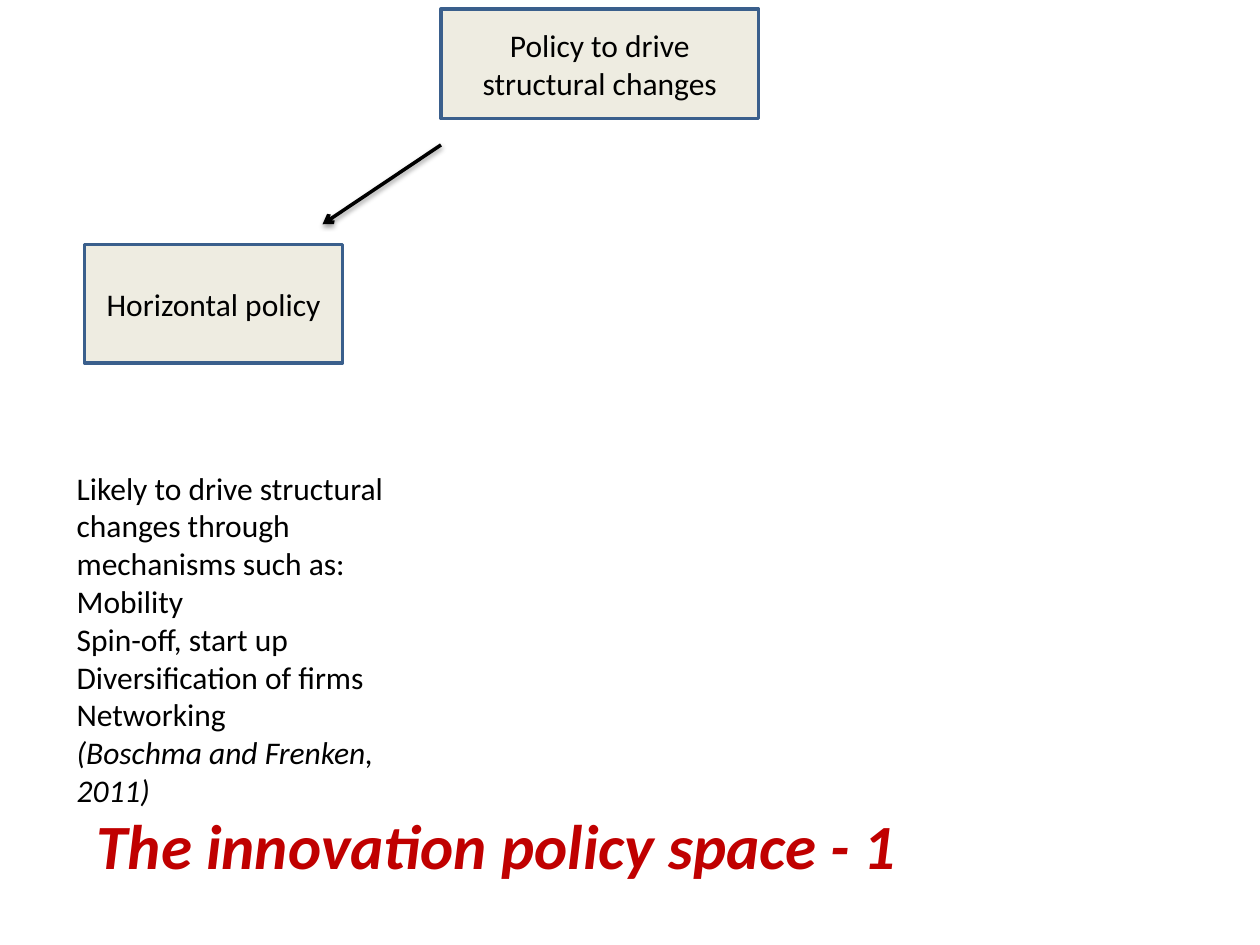
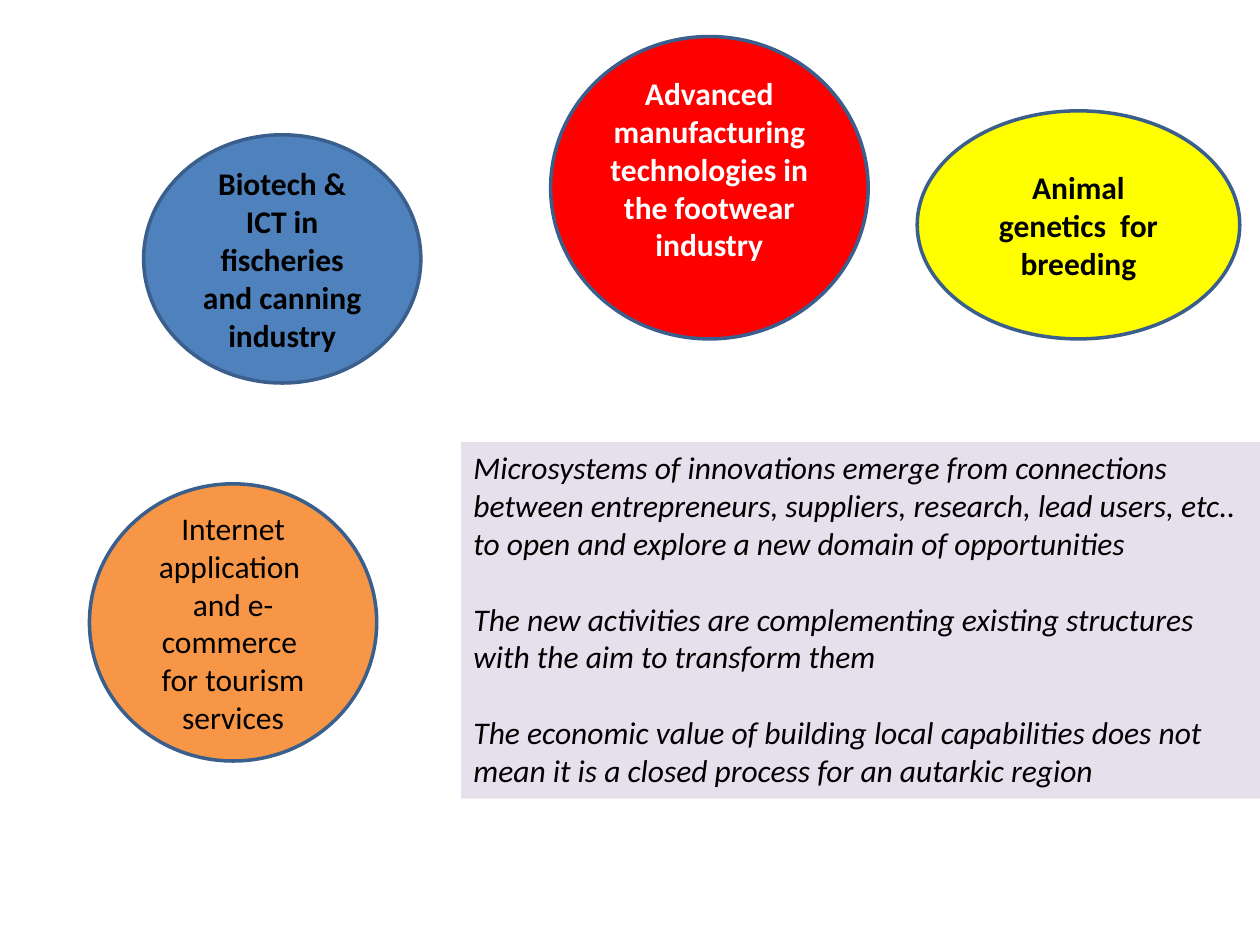
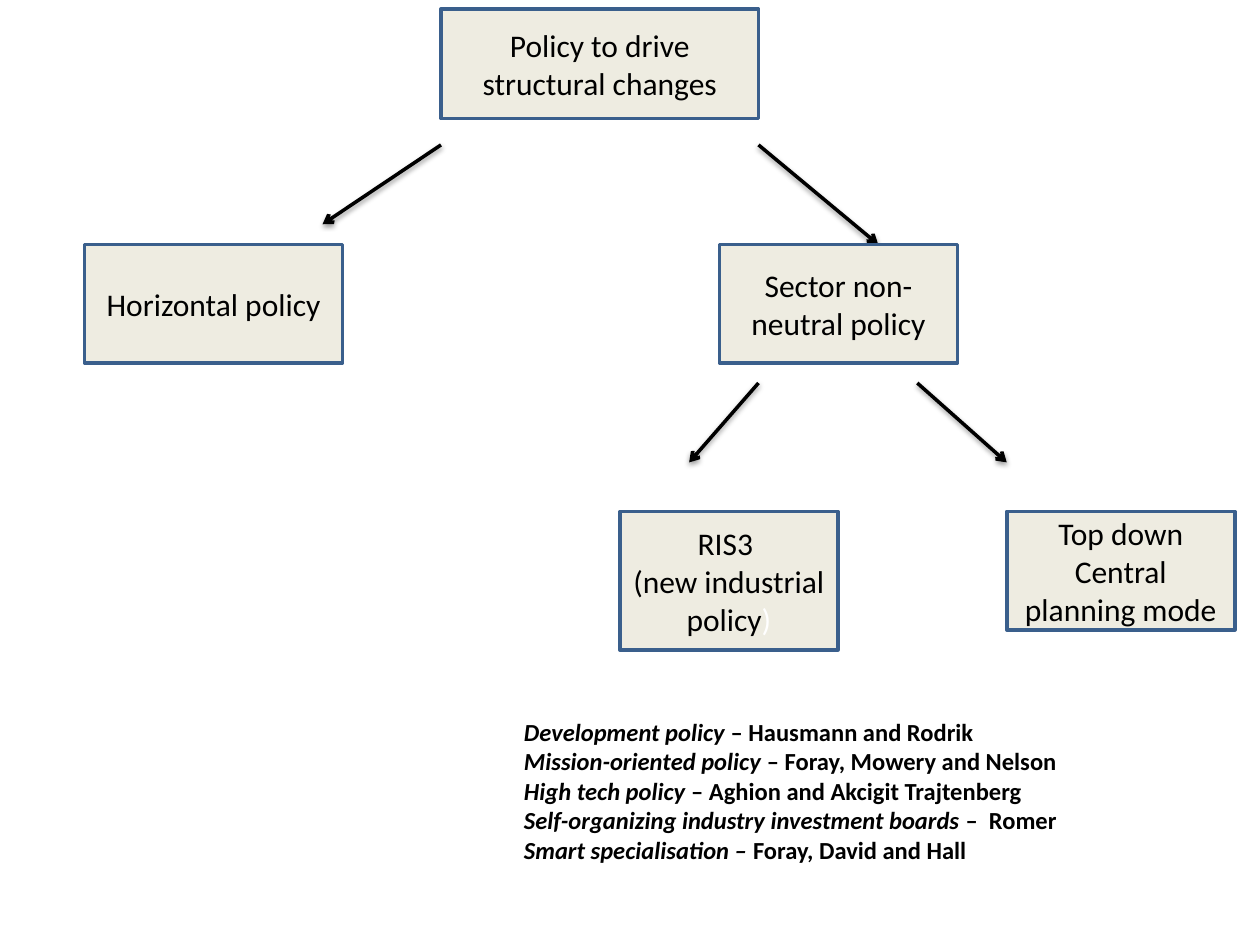
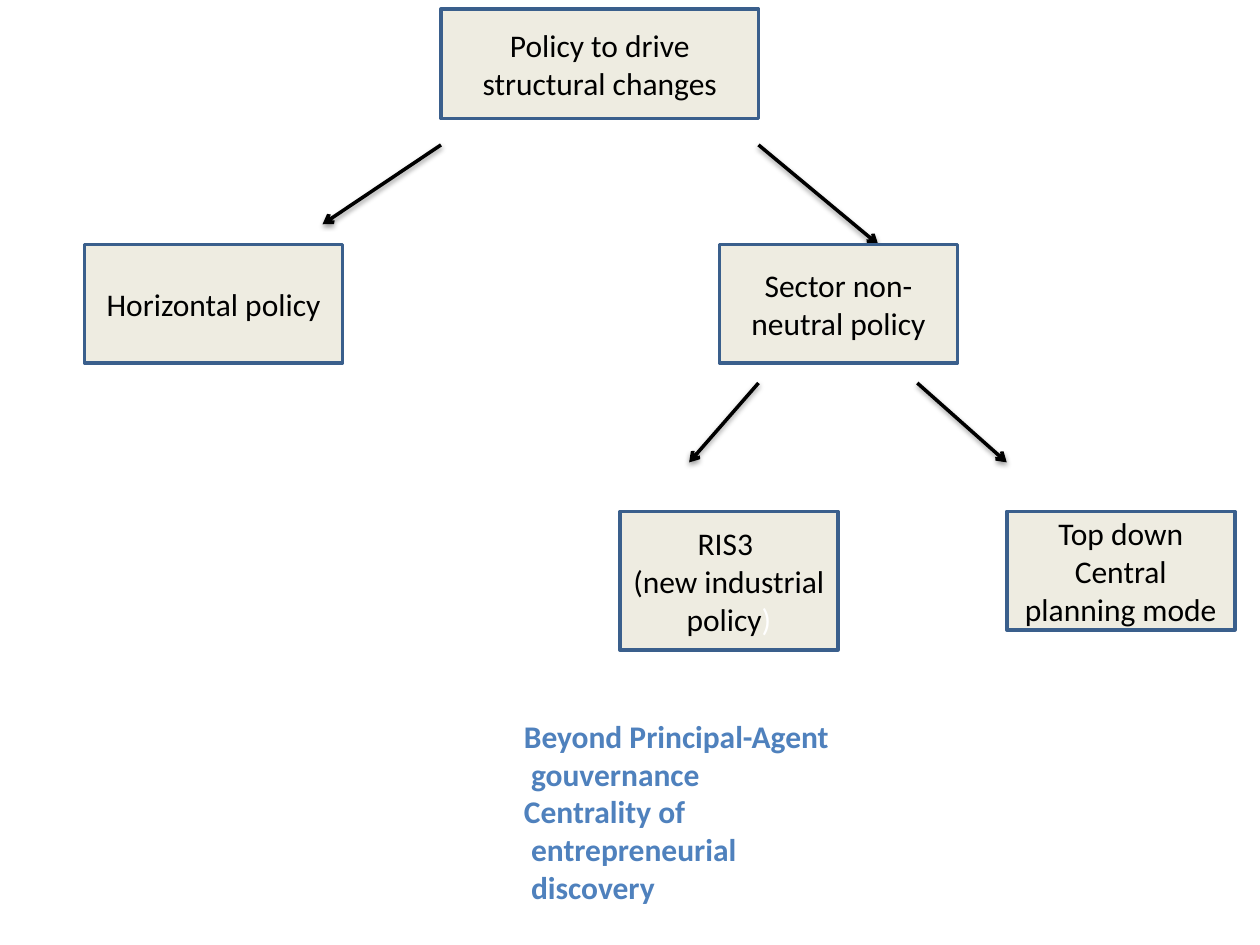
from dataclasses import dataclass

from lxml.etree import SubElement
from pptx import Presentation
from pptx.dml.color import RGBColor
from pptx.enum.shapes import MSO_CONNECTOR, MSO_SHAPE
from pptx.enum.text import MSO_ANCHOR, MSO_AUTO_SIZE, PP_ALIGN
from pptx.oxml.ns import qn
from pptx.util import Inches, Pt

FONT = "Calibri"
BLACK, WHITE = "000000", "FFFFFF"
BEIGE, EDGE, BLUE, RED = "EEECE1", "3A5F8C", "4F81BD", "C00000"
ROW = 0.94  # height of most policy boxes
LINE = 21.6  # points from one 18 pt line to the next


@dataclass(frozen=True)
class Run:
    text: str
    color: str = BLACK
    bold: bool = False
    italic: bool = False
    size: int = 18


Paras = list[list[Run]]


@dataclass(frozen=True)
class Node:
    left: float
    top: float
    width: float
    height: float
    paras: Paras
    fill: str = BEIGE
    kind: MSO_SHAPE = MSO_SHAPE.RECTANGLE
    foot: float = 0.05  # bottom inset


@dataclass(frozen=True)
class Arrow:
    x1: float
    y1: float
    x2: float
    y2: float


def rgb(color: str) -> RGBColor:
    return RGBColor.from_string(color)


def paras(*texts: str, **style) -> Paras:
    """One paragraph of one run for each text, all in the same style."""
    return [[Run(text, **style)] for text in texts]


def write(frame, rows: Paras, align=PP_ALIGN.LEFT, gap: float = 0) -> None:
    frame.word_wrap = True
    for i, row in enumerate(rows):
        para = frame.paragraphs[0] if i == 0 else frame.add_paragraph()
        para.alignment = align
        para.space_before = Pt(gap if i else 0)
        for item in row:
            run = para.add_run()
            run.text = item.text
            font = run.font
            font.name, font.size = FONT, Pt(item.size)
            font.bold, font.italic = item.bold, item.italic
            font.color.rgb = rgb(item.color)


def add_shape(slide, node: Node):
    shape = slide.shapes.add_shape(
        node.kind, Inches(node.left), Inches(node.top),
        Inches(node.width), Inches(node.height))
    shape.shadow.inherit = False
    shape.fill.solid()
    shape.fill.fore_color.rgb = rgb(node.fill)
    return shape


def add_node(slide, node: Node) -> None:
    shape = add_shape(slide, node)
    shape.line.color.rgb = rgb(EDGE)
    shape.line.width = Pt(2)
    frame = shape.text_frame
    frame.vertical_anchor = MSO_ANCHOR.MIDDLE
    frame.margin_bottom = Inches(node.foot)
    write(frame, node.paras, PP_ALIGN.CENTER)


def add_panel(slide, node: Node) -> None:
    """A borderless filled box of text with a blank line's gap between paragraphs."""
    shape = add_shape(slide, node)
    shape.line.fill.background()
    shape.text_frame.vertical_anchor = MSO_ANCHOR.TOP
    write(shape.text_frame, node.paras, gap=LINE)


def add_text(slide, left: float, top: float, width: float, height: float,
             rows: Paras) -> None:
    box = slide.shapes.add_textbox(
        Inches(left), Inches(top), Inches(width), Inches(height))
    write(box.text_frame, rows)
    box.text_frame.auto_size = MSO_AUTO_SIZE.SHAPE_TO_FIT_TEXT


def add_arrow(slide, arrow: Arrow) -> None:
    link = slide.shapes.add_connector(
        MSO_CONNECTOR.STRAIGHT, Inches(arrow.x1), Inches(arrow.y1),
        Inches(arrow.x2), Inches(arrow.y2))
    link.line.color.rgb = rgb(BLACK)
    link.line.width = Pt(2)
    SubElement(link.line._get_or_add_ln(), qn("a:tailEnd"), type="arrow")
    effects = SubElement(link._element.spPr, qn("a:effectLst"))
    shadow = SubElement(effects, qn("a:outerShdw"), blurRad=str(Pt(3.1)),
                        dist=str(Pt(1.6)), dir="5400000", rotWithShape="0")
    tint = SubElement(shadow, qn("a:srgbClr"), val=BLACK)
    SubElement(tint, qn("a:alpha"), val="38000")


ROOT = Node(3.5, 0.07, 2.52, 0.87, paras("Policy to drive structural changes"))
FLAT = Node(0.67, 1.94, 2.05, ROW, paras("Horizontal policy"))
SECTOR = Node(5.71, 1.94, 1.89, ROW, paras("Sector non-neutral policy"))
RIS = Node(4.92, 4.06, 1.73, 1.1, [
    [Run("RIS3 ")], [Run("(new industrial policy"), Run(")", WHITE)]])
PLAN = Node(7.99, 4.06, 1.81, ROW, paras("Top down", "Central planning mode"))

TO_FLAT = Arrow(3.5, 1.15, 2.56, 1.78)
TO_SECTOR = Arrow(6.02, 1.15, 6.97, 1.94)
TO_RIS = Arrow(6.02, 3.04, 5.47, 3.67)
TO_PLAN = Arrow(7.28, 3.04, 7.99, 3.67)

OVAL = MSO_SHAPE.OVAL
CASES = [
    Node(1.14, 1.07, 2.2, 1.97,
         paras("Biotech & ICT in fischeries and canning industry", bold=True),
         BLUE, OVAL),
    Node(4.37, 0.29, 2.52, 2.4,
         paras("Advanced manufacturing technologies in the footwear industry",
               color=WHITE, bold=True),
         "FF0000", OVAL, foot=0.35),
    Node(7.28, 0.88, 2.56, 1.81,
         paras("Animal genetics  for breeding", bold=True), "FFFF00", OVAL),
    Node(0.71, 3.84, 2.28, 2.2,
         paras("Internet application  and e-commerce  for tourism services"),
         "F79646", OVAL),
]
THESES = Node(3.66, 3.51, 6.34, 2.83, paras(
    "Microsystems of innovations emerge from connections between entrepreneurs, "
    "suppliers, research, lead users, etc.. to open and explore a new domain of "
    "opportunities",
    "The new activities are complementing existing structures with the aim to "
    "transform them",
    "The economic value of building local capabilities does not mean it is a "
    "closed process for an autarkic region",
    italic=True), "E6E0EC")

SCHOOLS = [
    ("Development policy ", "– Hausmann and Rodrik"),
    ("Mission-oriented policy ", "– Foray, Mowery and Nelson"),
    ("High tech policy ", "– Aghion and Akcigit Trajtenberg"),
    ("Self-organizing industry investment boards ", "–  Romer"),
    ("Smart specialisation – ", "Foray, David and Hall"),
]


def add_tree(slide, arrows: list[Arrow], nodes: list[Node]) -> None:
    for arrow in arrows:
        add_arrow(slide, arrow)
    for node in nodes:
        add_node(slide, node)


def add_full_tree(slide) -> None:
    add_tree(slide, [TO_FLAT, TO_SECTOR, TO_PLAN, TO_RIS],
             [FLAT, SECTOR, PLAN, ROOT, RIS])


def draw_space(slide) -> None:
    add_tree(slide, [TO_FLAT], [ROOT, FLAT])
    rows = paras(
        "Likely to drive structural changes through mechanisms such as:",
        "Mobility", "Spin-off, start up", "Diversification of firms", "Networking")
    rows += paras("(Boschma and Frenken, 2011)", italic=True)
    add_text(slide, 0.51, 3.67, 2.68, 2.83, rows)
    add_text(slide, 0.67, 6.35, 6.85, 0.71, paras(
        "The innovation policy space - 1",
        color=RED, bold=True, italic=True, size=36))


def draw_cases(slide) -> None:
    for case in CASES:
        add_node(slide, case)
    add_panel(slide, THESES)


def draw_schools(slide) -> None:
    add_full_tree(slide)
    add_text(slide, 4.06, 5.64, 5.75, 1.28, [
        [Run(school, bold=True, italic=True, size=14),
         Run(people, bold=True, size=14)]
        for school, people in SCHOOLS])


def draw_beyond(slide) -> None:
    add_full_tree(slide)
    add_text(slide, 4.06, 5.64, 2.68, 1.62, paras(
        "Beyond Principal-Agent", " gouvernance", "Centrality of",
        " entrepreneurial", " discovery", color=BLUE, bold=True))


def main() -> None:
    deck = Presentation()
    deck.slide_width, deck.slide_height = Inches(10), Inches(7.5)
    for draw in (draw_space, draw_cases, draw_schools, draw_beyond):
        draw(deck.slides.add_slide(deck.slide_layouts[6]))
    deck.save("out.pptx")


if __name__ == "__main__":
    main()
